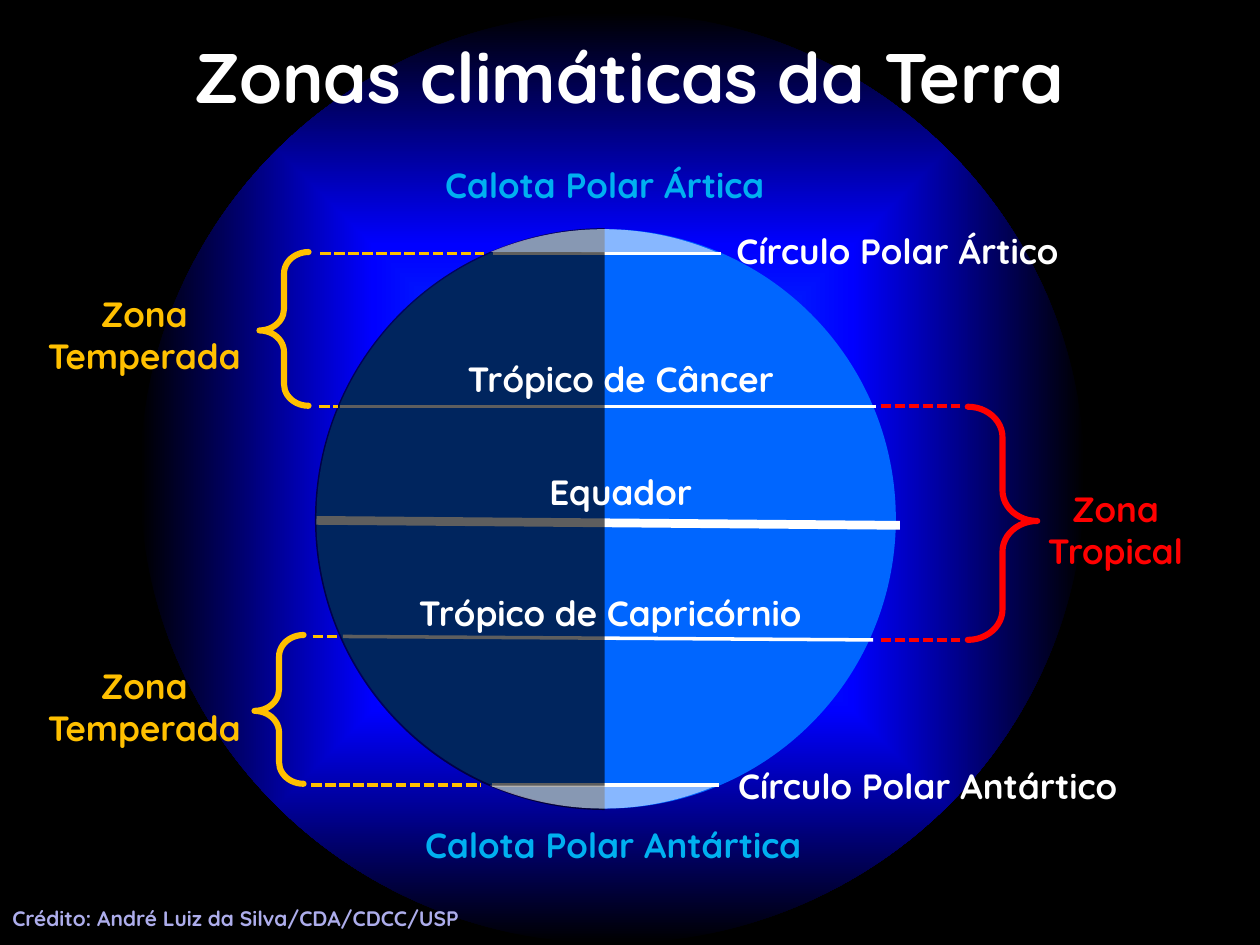
from lxml.etree import SubElement
from pptx import Presentation
from pptx.dml.color import RGBColor
from pptx.enum.dml import MSO_LINE
from pptx.enum.shapes import MSO_CONNECTOR, MSO_SHAPE
from pptx.enum.text import MSO_ANCHOR, MSO_AUTO_SIZE, PP_ALIGN
from pptx.oxml.ns import qn
from pptx.util import Cm, Pt

THEME = {
    "font": "Quicksand",
    "black": "000000", "white": "FFFFFF", "day": "0066FF", "deep": "0000FF",
    "temperate": "FFC000", "tropic": "FF0000", "polar": "00B0F0", "credit": "ADADEB",
    "title": 40, "label": 20, "small": 12,
}

# Content: all lengths in centimetres
HALO = (2.82, 0.25, 19.05, 18.77)
HALO_STOPS = [(0, "day"), (50, "deep"), (100, "black")]
GLOBE = (6.38, 4.62, 11.68, 11.68)
NIGHT = (6.35, 4.6, 11.68, 11.73)
CAP = (6.32, 4.62, 11.68, 11.68)

# x1, y1, x2, y2, width in points
CIRCLES = [
    (6.38, 10.49, 18.14, 10.59, 5),
    (6.86, 8.2, 17.65, 8.2, 2),
    (6.91, 12.83, 17.6, 12.9, 2),
    (9.93, 5.11, 14.53, 5.11, 2),
    (9.91, 15.82, 14.5, 15.82, 2),
]
# x1, x2, y, colour
DASHES = [
    (6.45, 9.75, 5.11, "temperate"),
    (6.27, 9.68, 15.82, "temperate"),
    (6.43, 6.81, 8.2, "temperate"),
    (6.3, 6.81, 12.83, "temperate"),
    (17.75, 19.35, 12.9, "tropic"),
    (17.75, 19.35, 8.18, "tropic"),
]
# box, rotation, colour
BRACES = [
    ((19.51, 8.2, 1.4, 4.7), 0, "tropic"),
    ((5.23, 5.08, 0.99, 3.1), 180, "temperate"),
    ((5.13, 12.8, 0.99, 3), 180, "temperate"),
]
# text, left, top, width, height, colour
LABELS = [
    ("Trópico de Câncer", 6.71, 7.09, 11.61, 1.11, "white"),
    ("Trópico de Capricórnio", 6.5, 11.79, 11.61, 1.11, "white"),
    ("Equador", 6.71, 9.37, 11.61, 1.11, "white"),
    ("Círculo Polar Ártico", 12.29, 4.5, 11.61, 1.11, "white"),
    ("Círculo Polar Antártico", 12.9, 15.29, 11.61, 1.11, "white"),
    ("Zona Tropical", 20.09, 9.7, 4.8, 1.96, "tropic"),
    ("Zona Temperada", 0.51, 5.77, 4.8, 1.96, "temperate"),
    ("Zona Temperada", 0.51, 13.28, 4.8, 1.96, "temperate"),
    ("Calota Polar Antártica", 7.87, 16.48, 8.99, 1.11, "polar"),
    ("Calota Polar Ártica", 7.7, 3.18, 8.99, 1.11, "polar"),
]
CREDIT = ("Crédito: André Luiz da Silva/CDA/CDCC/USP", 0, 18.14, 26.11, 0.76, "credit")
TITLE = ("Zonas climáticas da Terra", 1.09, 0.13, 23.19, 2.79, "white")


def tint(name):
    return RGBColor.from_string(THEME[name])


def shape(kind, box, turn=0, adj=()):
    item = slide.shapes.add_shape(kind, *map(Cm, box))
    item.shadow.inherit = False
    item.rotation = turn
    for i, value in enumerate(adj):
        item.adjustments[i] = value
    return item


def paint(item, color, alpha=None):
    item.fill.solid()
    item.fill.fore_color.rgb = tint(color)
    item.line.fill.background()
    if alpha:
        node = item.fill._xPr.find(qn("a:solidFill"))[0]
        SubElement(node, qn("a:alpha"), val=str(alpha * 1000))


def glow(item, stops):
    """Fill a shape with a gradient that spreads from its centre."""
    item.line.fill.background()
    item.fill.gradient()
    grad = item.fill._xPr.find(qn("a:gradFill"))
    for node in list(grad):
        grad.remove(node)
    steps = SubElement(grad, qn("a:gsLst"))
    for pos, color in stops:
        step = SubElement(steps, qn("a:gs"), pos=str(pos * 1000))
        SubElement(step, qn("a:srgbClr"), val=THEME[color])
    way = SubElement(grad, qn("a:path"), {"path": "shape"})
    SubElement(way, qn("a:fillToRect"), dict.fromkeys("ltrb", "50000"))


def rule(x1, y1, x2, y2, width, color, dash=None):
    item = slide.shapes.add_connector(MSO_CONNECTOR.STRAIGHT, *map(Cm, (x1, y1, x2, y2)))
    item.line.width = Pt(width)
    item.line.color.rgb = tint(color)
    if dash:
        item.line.dash_style = dash
    SubElement(item._element.spPr, qn("a:effectLst"))


def write(text, left, top, width, height, color, size="label", align=PP_ALIGN.CENTER):
    frame = slide.shapes.add_textbox(*map(Cm, (left, top, width, height))).text_frame
    frame.word_wrap = True
    frame.auto_size = MSO_AUTO_SIZE.SHAPE_TO_FIT_TEXT
    para = frame.paragraphs[0]
    para.text = text
    para.alignment = align
    font = para.font
    font.name, font.size, font.bold = THEME["font"], Pt(THEME[size]), True
    font.color.rgb = tint(color)
    return frame


deck = Presentation()
deck.slide_width, deck.slide_height = Cm(25.4), Cm(19.05)
slide = deck.slides.add_slide(deck.slide_layouts[6])
slide.background.fill.solid()
slide.background.fill.fore_color.rgb = tint("black")

# Halo and globe
glow(shape(MSO_SHAPE.OVAL, HALO), HALO_STOPS)
paint(shape(MSO_SHAPE.OVAL, GLOBE), "day")

# Equator, tropics and polar circles
for circle in CIRCLES:
    rule(*circle, "white")

# Night side and polar caps
paint(shape(MSO_SHAPE.CHORD, NIGHT, adj=(54, 162)), "black", 63)
for turn in (0, 180):
    paint(shape(MSO_SHAPE.CHORD, CAP, turn, (40.3, 67.78)), "white", 53)

# Zone braces and their dashed guides
for box, turn, color in BRACES:
    brace = shape(MSO_SHAPE.RIGHT_BRACE, box, turn, (0.44, 0.49))
    brace.fill.background()
    brace.line.width = Pt(3.5)
    brace.line.color.rgb = tint(color)
    brace.line._ln.set("cap", "rnd")
for x1, x2, y, color in DASHES:
    rule(x1, y, x2, y, 2, color, MSO_LINE.SQUARE_DOT)

# Labels, credit and title
for label in LABELS:
    write(*label)
write(*CREDIT, "small", PP_ALIGN.LEFT)
head = write(*TITLE, "title")
head.auto_size = MSO_AUTO_SIZE.NONE
head.vertical_anchor = MSO_ANCHOR.MIDDLE

deck.save("out.pptx")
